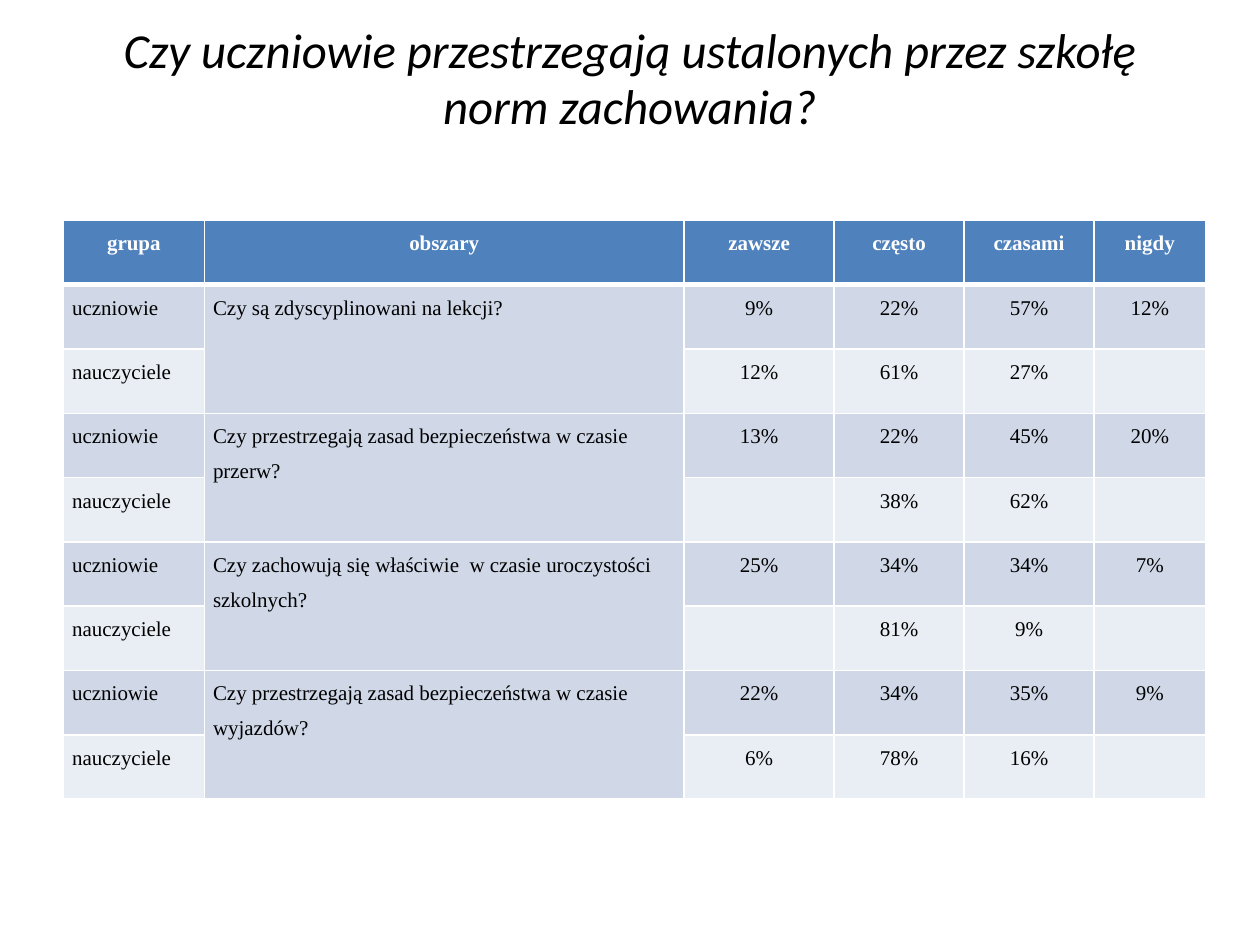
"""Build a slide with a survey table on pupils' behaviour."""
from lxml import etree
from pptx import Presentation
from pptx.dml.color import RGBColor
from pptx.enum import text as t
from pptx.oxml import ns
from pptx.util import Pt

HUES = {"head": "4F81BD", "dark": "D0D8E8", "light": "E9EDF4",
        "white": "FFFFFF", "black": "000000"}
LEFT, MID, JUST = t.PP_ALIGN.LEFT, t.PP_ALIGN.CENTER, t.PP_ALIGN.JUSTIFY


def write(frame, words, size=12, font="Times New Roman", hue="black",
          bold=False, slant=False, align=MID, lines=1.5):
    para = frame.paragraphs[0]
    para.alignment = align
    para.line_spacing = lines
    run = para.add_run()
    run.text = words
    run.font.size = Pt(size)
    run.font.name = font
    run.font.bold = bold
    run.font.italic = slant
    run.font.color.rgb = RGBColor.from_string(HUES[hue])


def edge(cell, side, width):
    line = etree.SubElement(cell._tc.get_or_add_tcPr(), ns.qn("a:ln" + side),
                            w=str(Pt(width)))
    fill = etree.SubElement(line, ns.qn("a:solidFill"))
    etree.SubElement(fill, ns.qn("a:srgbClr"), val=HUES["white"])


deck = Presentation()
deck.slide_width, deck.slide_height = Pt(720), Pt(540)
slide = deck.slides.add_slide(deck.slide_layouts[6])

title = slide.shapes.add_textbox(Pt(36), Pt(21.6), Pt(648), Pt(90)).text_frame
title.word_wrap = True
title.vertical_anchor = t.MSO_ANCHOR.BOTTOM
title.margin_top, title.margin_bottom = 0, Pt(33.7)
write(title, "Czy uczniowie przestrzegają ustalonych przez szkołę norm zachowania?",
      size=27.9, font="Calibri", slant=True, lines=0.97)

heads = ["grupa", "obszary", "zawsze", "często", "czasami", "nigdy"]
areas = [
    ("Czy są zdyscyplinowani na lekcji?",
     ["9%", "22%", "57%", "12%"], ["12%", "61%", "27%", ""]),
    ("Czy przestrzegają zasad bezpieczeństwa w czasie przerw?",
     ["13%", "22%", "45%", "20%"], ["", "38%", "62%", ""]),
    ("Czy zachowują się właściwie  w czasie uroczystości szkolnych?",
     ["25%", "34%", "34%", "7%"], ["", "81%", "9%", ""]),
    ("Czy przestrzegają zasad bezpieczeństwa w czasie wyjazdów?",
     ["22%", "34%", "35%", "9%"], ["6%", "78%", "16%", ""]),
]
rows = [heads]
for area, pupils, staff in areas:
    rows.append(["uczniowie", area, *pupils])
    rows.append(["nauczyciele", "", *staff])

widths = [80.5, 274.25, 85.75, 74.25, 74.25, 63.75]
tall = 36.75
table = slide.shapes.add_table(len(rows), len(heads), Pt(36.25), Pt(126),
                               Pt(sum(widths)), Pt(tall * len(rows))).table
for col, width in zip(table.columns, widths):
    col.width = Pt(width)

for r, row in enumerate(rows):
    table.rows[r].height = Pt(tall)
    for c, words in enumerate(row):
        cell = table.cell(r, c)
        cell.margin_left = cell.margin_right = Pt(5)
        cell.margin_top = cell.margin_bottom = 0
        for side in "LRTB":
            thick = (r, side) in [(0, "B"), (1, "T")]
            edge(cell, side, 3 if thick else 1)
        tone = "head" if r == 0 else "dark" if r % 2 or c == 1 else "light"
        cell.fill.solid()
        cell.fill.fore_color.rgb = RGBColor.from_string(HUES[tone])
        if words and r == 0:
            write(cell.text_frame, words, hue="white", bold=True)
        elif words:
            write(cell.text_frame, words, align={0: JUST, 1: LEFT}.get(c, MID))

for r in range(1, len(rows), 2):
    table.cell(r, 1).merge(table.cell(r + 1, 1))

deck.save("out.pptx")
